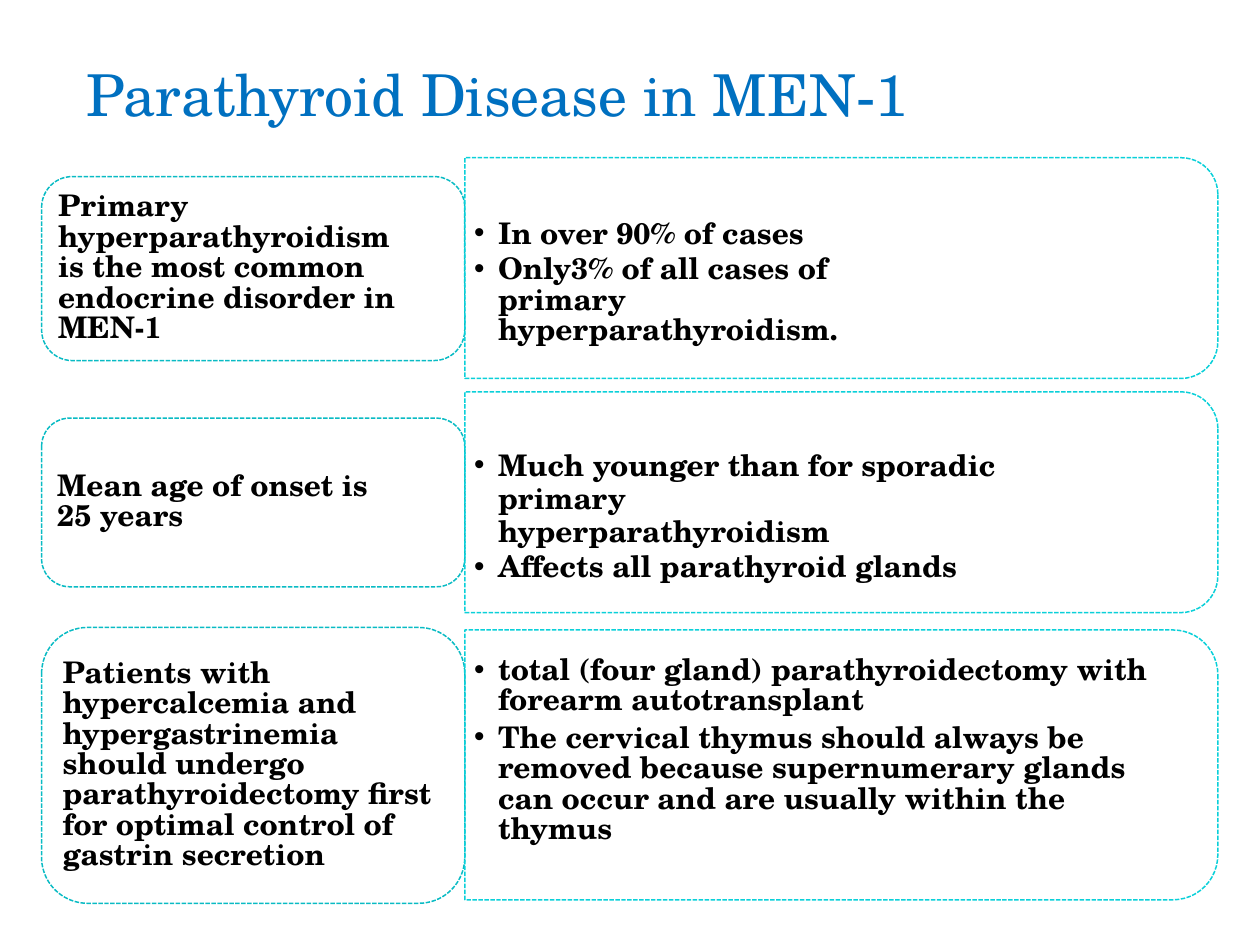
from lxml import etree
from pptx import Presentation
from pptx.dml.color import RGBColor
from pptx.enum.dml import MSO_LINE
from pptx.enum.shapes import MSO_SHAPE
from pptx.enum.text import MSO_ANCHOR, MSO_AUTO_SIZE, PP_ALIGN
from pptx.oxml.ns import qn
from pptx.util import Cm, Pt

ROUND = MSO_SHAPE.ROUNDED_RECTANGLE
HALF = MSO_SHAPE.ROUND_2_SAME_RECTANGLE
DASH = MSO_LINE.SQUARE_DOT
TOP, MID = MSO_ANCHOR.TOP, MSO_ANCHOR.MIDDLE
LEFT, FIXED = PP_ALIGN.LEFT, MSO_AUTO_SIZE.NONE
FACE = "TeX Gyre Schola"


def style(para, size, color, bold):
    para.alignment = LEFT
    font = para.font
    font.name, font.size, font.bold = FACE, Pt(size), bold
    font.color.rgb = RGBColor.from_string(color)


def frame(shape, anchor, left, top, right):
    text = shape.text_frame
    text.word_wrap, text.auto_size = True, FIXED
    text.vertical_anchor = anchor
    text.margin_left, text.margin_top = Cm(left), Cm(top)
    text.margin_right, text.margin_bottom = Cm(right), 0
    return text


deck = Presentation()
deck.slide_width, deck.slide_height = Cm(25.4), Cm(19.05)
slide = deck.slides.add_slide(deck.slide_layouts[4])
holders = {h.placeholder_format.idx: h for h in slide.placeholders}

title = slide.shapes.title
title.left, title.top, title.width, title.height = Cm(1.75), Cm(0.58), Cm(21.9), Cm(2.01)
text = frame(title, MID, 0, 0.58, 0)
text.text = "Parathyroid Disease in MEN-1"
style(text.paragraphs[0], 33, "0070C0", False)

topics = [
    ("Primary hyperparathyroidism is the most common endocrine disorder in MEN-1",
     3.56, 3.71, 0.86),
    ("Mean age of onset is 25 years", 8.43, 3.4, 1.1),
    ("Patients with hypercalcemia and hypergastrinemia should undergo "
     "parathyroidectomy first for optimal control of gastrin secretion",
     12.65, 5.56, 0.38),
]
panels = [(3.18, 4.45), (7.9, 4.45), (12.7, 5.44)]
edge, wide = 9.37, 15.18

for words, top, high, right in topics:
    box = slide.shapes.add_shape(ROUND, Cm(0.84), Cm(top), Cm(8.53), Cm(high))
    box.shadow.inherit = False
    box.fill.background()
    box.line.color.rgb = RGBColor.from_string("09BBC4")
    box.line.width, box.line.dash_style = Pt(0.84), DASH
    text = frame(box, MID, 0.15, 0, right)
    text.text = words
    text.paragraphs[0].line_spacing = 0.85
    style(text.paragraphs[0], 17, "000000", True)

for top, high in panels:
    shift = (wide - high) / 2
    box = slide.shapes.add_shape(HALF, Cm(edge + shift), Cm(top - shift), Cm(high), Cm(wide))
    box.rotation = 90
    box.shadow.inherit = False
    box.fill.background()
    box.line.color.rgb = RGBColor.from_string("0AD0D9")
    box.line.width, box.line.dash_style = Pt(0.84), DASH

lists = [
    (1, 4.29, 9.83, 2.13, 0.03, [
        ("In over 90% of cases", Pt(20.4), 1.1, True),
        ("Only3% of all cases of primary hyperparathyroidism.", Pt(17.4), 3, True)]),
    (2, 9.02, 13.16, 2.13, 0.03, [
        ("Much younger than for sporadic primary", Pt(18.9), 1.1, True),
        ("hyperparathyroidism", Pt(18.9), 0, False),
        ("Affects all parathyroid glands", Pt(20.4), 0, True)]),
    (4, 13.08, 14.33, 3.38, 0.15, [
        ("total (four gland) parathyroidectomy with forearm autotransplant", 0.85, 4, True),
        ("The cervical thymus should always be removed because supernumerary glands "
         "can occur and are usually within the thymus", 0.85, 4, True)]),
]
for key, top, width, high, inset, items in lists:
    body = holders[key]
    body.left, body.top, body.width, body.height = Cm(9.53), Cm(top), Cm(width), Cm(high)
    text = frame(body, TOP, 0, inset, 0)
    text.text = "\n".join(item[0] for item in items)
    for para, (words, pitch, before, dot) in zip(text.paragraphs, items):
        para.line_spacing, para.space_before = pitch, Pt(before)
        props = para._p.get_or_add_pPr()
        props.set("marL", str(Cm(0.51)))
        props.set("indent", str(Cm(-0.48) if dot else 0))
        mark = etree.SubElement(props, qn("a:buChar" if dot else "a:buNone"))
        if dot:
            mark.set("char", "•")
        style(para, 17, "000000", True)

spare = holders[3].element
spare.getparent().remove(spare)

deck.save("out.pptx")
